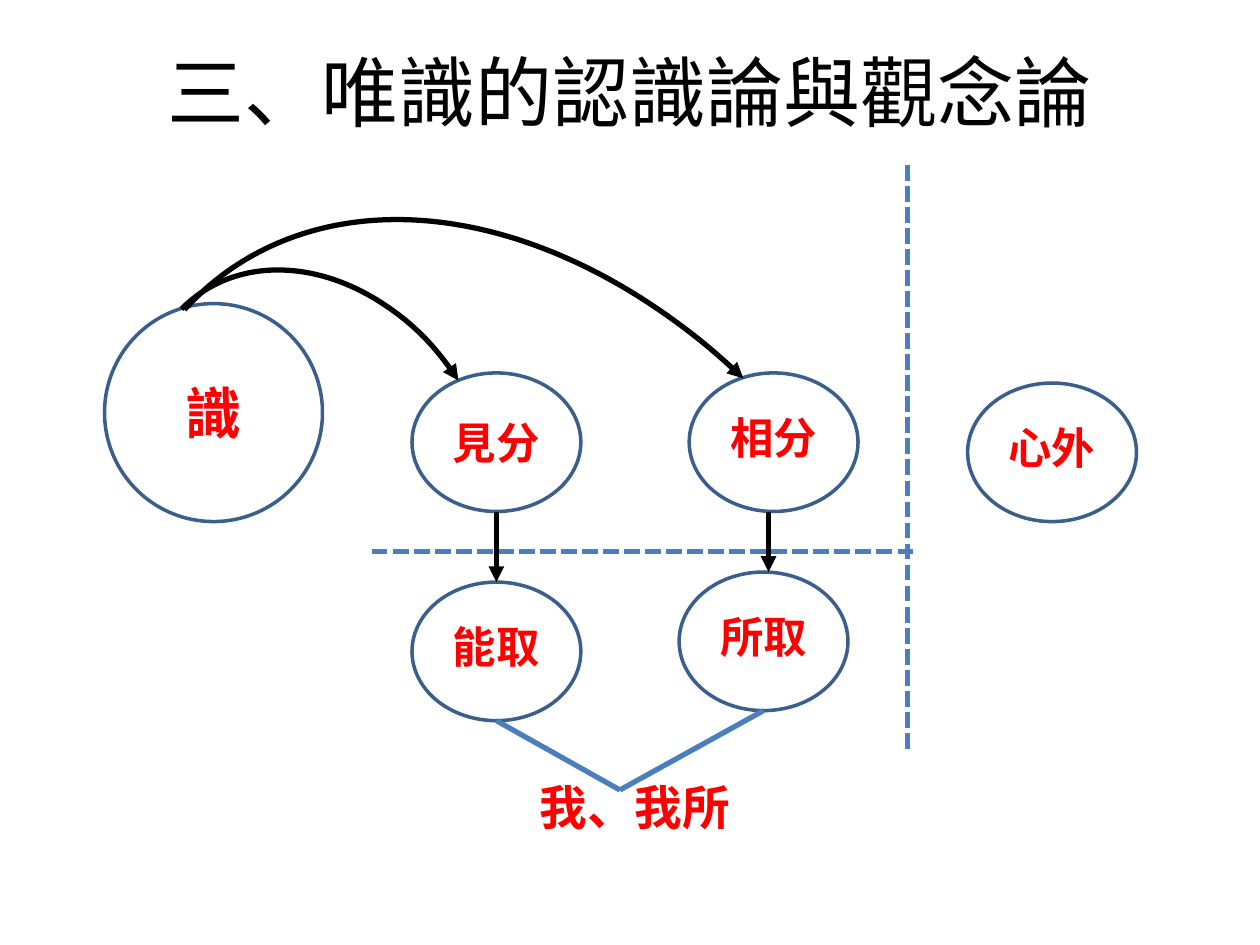
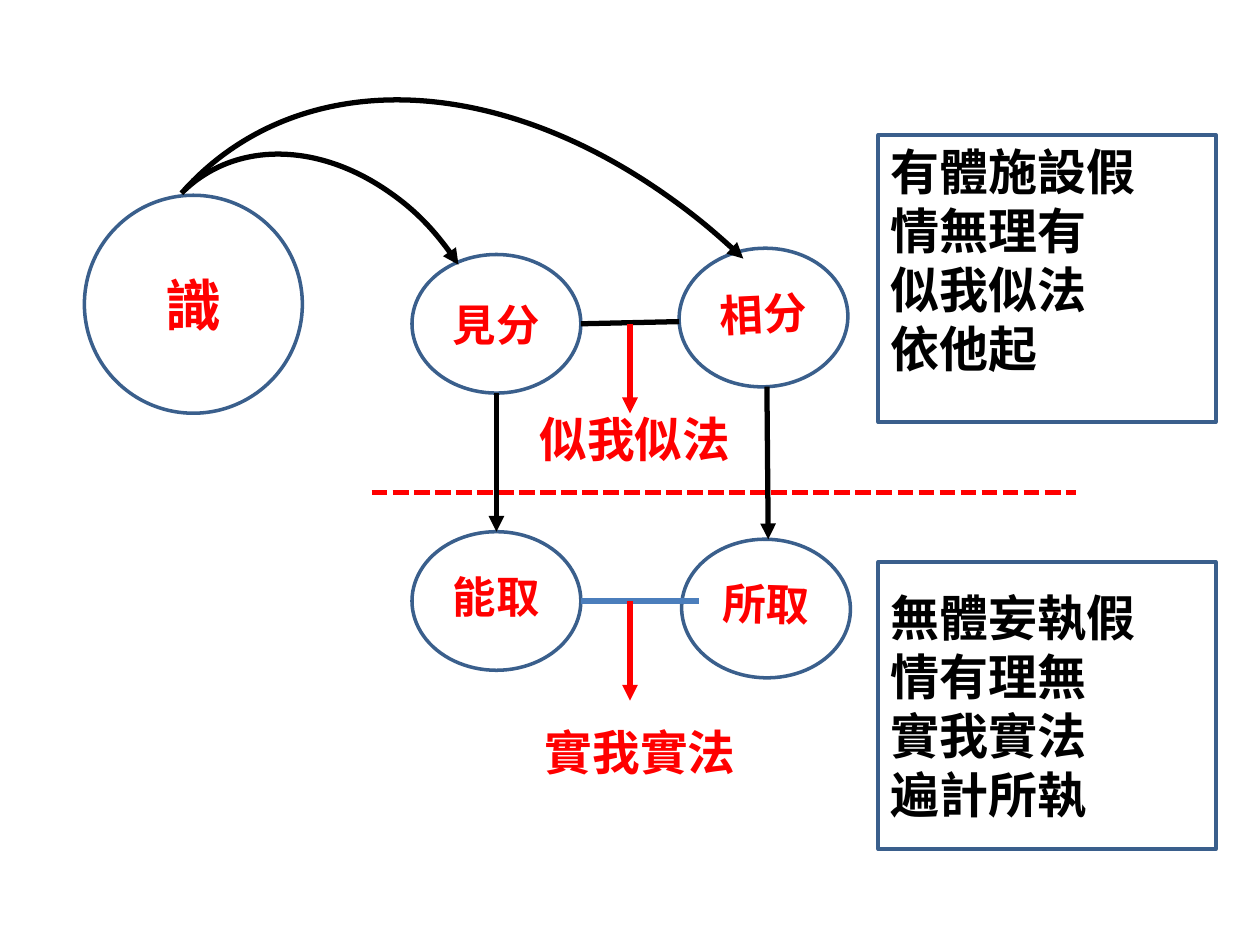
from dataclasses import dataclass
from math import cos, radians, sin

from lxml.etree import SubElement
from pptx import Presentation
from pptx.dml.color import RGBColor
from pptx.enum.shapes import MSO_CONNECTOR, MSO_SHAPE
from pptx.enum.text import MSO_ANCHOR, MSO_AUTO_SIZE, PP_ALIGN
from pptx.oxml.ns import qn
from pptx.util import Inches, Pt


@dataclass(frozen=True)
class Theme:
    font: str = "Calibri"
    black: str = "000000"
    red: str = "FF0000"
    blue: str = "4B7EBC"
    outline: str = "3A5F8C"
    title: float = 44
    source: float = 32
    node: float = 24.8
    caption: float = 27.2
    panel: float = 28
    thin: float = 2
    thick: float = 3


THEME = Theme()
SLIDE_SIZE = (10, 7.5)
TITLE_AREA = (0.5, 0.21, 9, 1.02)
SOURCE_SIZE = (1.73, 1.73)
NODE_SIZE = (1.34, 1.1)
PANEL_SIZE = (2.68, 2.28)
LEFT, PANEL_LEFT = 3.27, 6.97
ARC_ROTATION = 327.1
SMALL_ARC = ((1.22, 2.63, 3.39), (157.44, 0))
LARGE_ARC = ((1.21, 6.09, 8.72), (157.62, 200.23))
SIDES = {"top": (0, -0.5), "bottom": (0, 0.5), "left": (-0.5, 0), "right": (0.5, 0)}

# Link looks: colour, dashed, arrowhead
FLOW = (THEME.black, False, True)
JOIN = (THEME.black, False, False)
RESULT = (THEME.red, False, True)
GRASP = (THEME.blue, False, False)
INNER_BORDER = (THEME.blue, True, False)
REALITY_BORDER = (THEME.red, True, False)

# Nodes: left, top, rotation. Captions: left, top, width, height.
# Link ends: a point, or a node and one of its sides.
DIAGRAMS = [
    {
        "title": "三、唯識的認識論與觀念論",
        "lead": "見分",
        "source": ("識", 0.83, 2.41),
        "nodes": {
            "見分": (LEFT, 2.96, 0),
            "相分": (5.47, 2.96, 0),
            "心外": (7.68, 3.04, 0),
            "能取": (LEFT, 4.62, 0),
            "所取": (5.39, 4.54, 0),
        },
        "arc_tops": (2.04, 1.4),
        "links": [
            ((7.2, 1.31), (7.2, 5.95), INNER_BORDER),
            ((2.95, 4.38), (7.28, 4.38), INNER_BORDER),
            (("見分", "bottom"), ("能取", "top"), FLOW),
            ((6.1, 4.06), (6.1, 4.54), FLOW),
            (("能取", "bottom"), (4.92, 6.27), GRASP),
            ((4.92, 6.27), ("所取", "bottom"), GRASP),
        ],
        "captions": {"我、我所": (3.82, 5.88, 2.44, 1.1)},
        "panels": [],
    },
    {
        "title": None,
        "lead": "見分",
        "source": ("識", 0.67, 1.55),
        "nodes": {
            "見分": (LEFT, 2.02, 0),
            "相分": (5.39, 1.97, -2.8),
            "能取": (LEFT, 4.22, 0),
            "所取": (5.41, 4.28, 1.8),
        },
        "arc_tops": (1.12, 0.45),
        "links": [
            ((2.95, 3.91), (8.54, 3.91), REALITY_BORDER),
            (("見分", "bottom"), ("能取", "top"), FLOW),
            (("相分", "bottom"), ("所取", "top"), FLOW),
            (("能取", "right"), (5.55, 4.77), GRASP),
            ((5, 4.77), (5, 5.56), RESULT),
            (("見分", "right"), ("相分", "left"), JOIN),
            ((5, 2.57), (5, 3.28), RESULT),
        ],
        "captions": {
            "似我似法": (3.82, 2.96, 2.44, 1.1),
            "實我實法": (3.82, 5.56, 2.52, 0.87),
        },
        # Top, bottom inset, lines
        "panels": [
            (1.07, 0.35, ["有體施設假", "情無理有", "似我似法", "依他起"]),
            (4.46, 0.05, ["無體妄執假", "情有理無", "實我實法", "遍計所執"]),
        ],
    },
]


def place(shape, area):
    for side, length in zip(("left", "top", "width", "height"), area):
        setattr(shape, side, Inches(length))


def draw_line(line, color, width, dashed=False, arrow=False):
    line.color.rgb = RGBColor.from_string(color)
    line.width = Pt(width)
    ln = line._get_or_add_ln()
    if dashed:
        SubElement(ln, qn("a:prstDash"), val="sysDash")
    if arrow:
        SubElement(ln, qn("a:tailEnd"), type="triangle")


def write(shape, lines, size, color, bold=True, align=PP_ALIGN.CENTER,
          spacing=1.0, before=0.0, inset=(0, 0, 0, 0)):
    frame = shape.text_frame
    left, top, right, bottom = map(Inches, inset)
    frame_format = {
        "word_wrap": True, "auto_size": MSO_AUTO_SIZE.NONE,
        "vertical_anchor": MSO_ANCHOR.MIDDLE, "margin_left": left,
        "margin_top": top, "margin_right": right, "margin_bottom": bottom,
    }
    for key, value in frame_format.items():
        setattr(frame, key, value)
    frame.text = "\n".join(lines)
    for paragraph in frame.paragraphs:
        paragraph.alignment = align
        paragraph.line_spacing = spacing
        paragraph.space_before = Pt(size * before)
        font = paragraph.runs[0].font
        font.color.rgb = RGBColor.from_string(color)
        for key, value in {"name": THEME.font, "size": Pt(size), "bold": bold}.items():
            setattr(font, key, value)


def add_outline(slide, preset, area, rotation=0, outlined=True):
    shape = slide.shapes.add_shape(preset, *map(Inches, area))
    shape.shadow.inherit = False
    shape.fill.background()
    shape.rotation = rotation
    if outlined:
        draw_line(shape.line, THEME.outline, THEME.thin)
    else:
        shape.line.fill.background()
    return shape


def shape_lead(body, area):
    """Turn the body placeholder into an outlined ellipse without a bullet."""
    place(body, area)
    geometry = SubElement(body._element.spPr, qn("a:prstGeom"), prst="ellipse")
    SubElement(geometry, qn("a:avLst"))
    body.fill.background()
    draw_line(body.line, THEME.outline, THEME.thin)


def add_nodes(slide, diagram):
    for label, (left, top, rotation) in diagram["nodes"].items():
        area = (left, top, *NODE_SIZE)
        is_lead = label == diagram["lead"]
        if is_lead:
            node = slide.placeholders[1]
            shape_lead(node, area)
        else:
            node = add_outline(slide, MSO_SHAPE.OVAL, area, rotation)
        write(node, [label], THEME.node, THEME.red,
              spacing=1.0 if is_lead else 0.8, before=0.2)
        if is_lead:
            properties = node.text_frame.paragraphs[0]._p.get_or_add_pPr()
            properties.set("marL", "0")
            properties.set("indent", "0")
            SubElement(properties, qn("a:buNone"))


def add_arcs(slide, tops):
    for ((left, width, height), angles), top in zip((SMALL_ARC, LARGE_ARC), tops):
        arc = add_outline(slide, MSO_SHAPE.ARC, (left, top, width, height), ARC_ROTATION)
        for index, angle in enumerate(angles):
            arc.adjustments[index] = angle
        draw_line(arc.line, THEME.black, THEME.thick, arrow=True)


def locate(end, nodes):
    """Give the point of a link end, following the node's rotation."""
    if end[0] not in nodes:
        return end
    left, top, rotation = nodes[end[0]]
    width, height = NODE_SIZE
    across, down = SIDES[end[1]]
    x, y, turn = across * width, down * height, radians(rotation)
    return (left + width / 2 + x * cos(turn) - y * sin(turn),
            top + height / 2 + x * sin(turn) + y * cos(turn))


def add_links(slide, links, nodes):
    for start, finish, (color, dashed, arrow) in links:
        ends = (*locate(start, nodes), *locate(finish, nodes))
        link = slide.shapes.add_connector(MSO_CONNECTOR.STRAIGHT, *map(Inches, ends))
        draw_line(link.line, color, THEME.thick, dashed, arrow)
        SubElement(link._element.spPr, qn("a:effectLst"))


def add_diagram(deck, diagram):
    slide = deck.slides.add_slide(deck.slide_layouts[1])
    title = slide.shapes.title
    if diagram["title"]:
        place(title, TITLE_AREA)
        write(title, [diagram["title"]], THEME.title, THEME.black, bold=False)
    else:
        title._element.getparent().remove(title._element)

    add_nodes(slide, diagram)
    label, left, top = diagram["source"]
    source = add_outline(slide, MSO_SHAPE.OVAL, (left, top, *SOURCE_SIZE))
    write(source, [label], THEME.source, THEME.red)
    add_arcs(slide, diagram["arc_tops"])
    add_links(slide, diagram["links"], diagram["nodes"])

    for text, area in diagram["captions"].items():
        caption = add_outline(slide, MSO_SHAPE.OVAL, area, outlined=False)
        write(caption, [text], THEME.caption, THEME.red, spacing=0.9, before=0.2)
    for top, bottom_inset, lines in diagram["panels"]:
        panel = add_outline(slide, MSO_SHAPE.RECTANGLE, (PANEL_LEFT, top, *PANEL_SIZE))
        write(panel, lines, THEME.panel, THEME.black, align=PP_ALIGN.LEFT,
              inset=(0.1, 0.05, 0.1, bottom_inset))


def main():
    deck = Presentation()
    deck.slide_width, deck.slide_height = map(Inches, SLIDE_SIZE)
    for diagram in DIAGRAMS:
        add_diagram(deck, diagram)
    deck.save("out.pptx")


if __name__ == "__main__":
    main()
